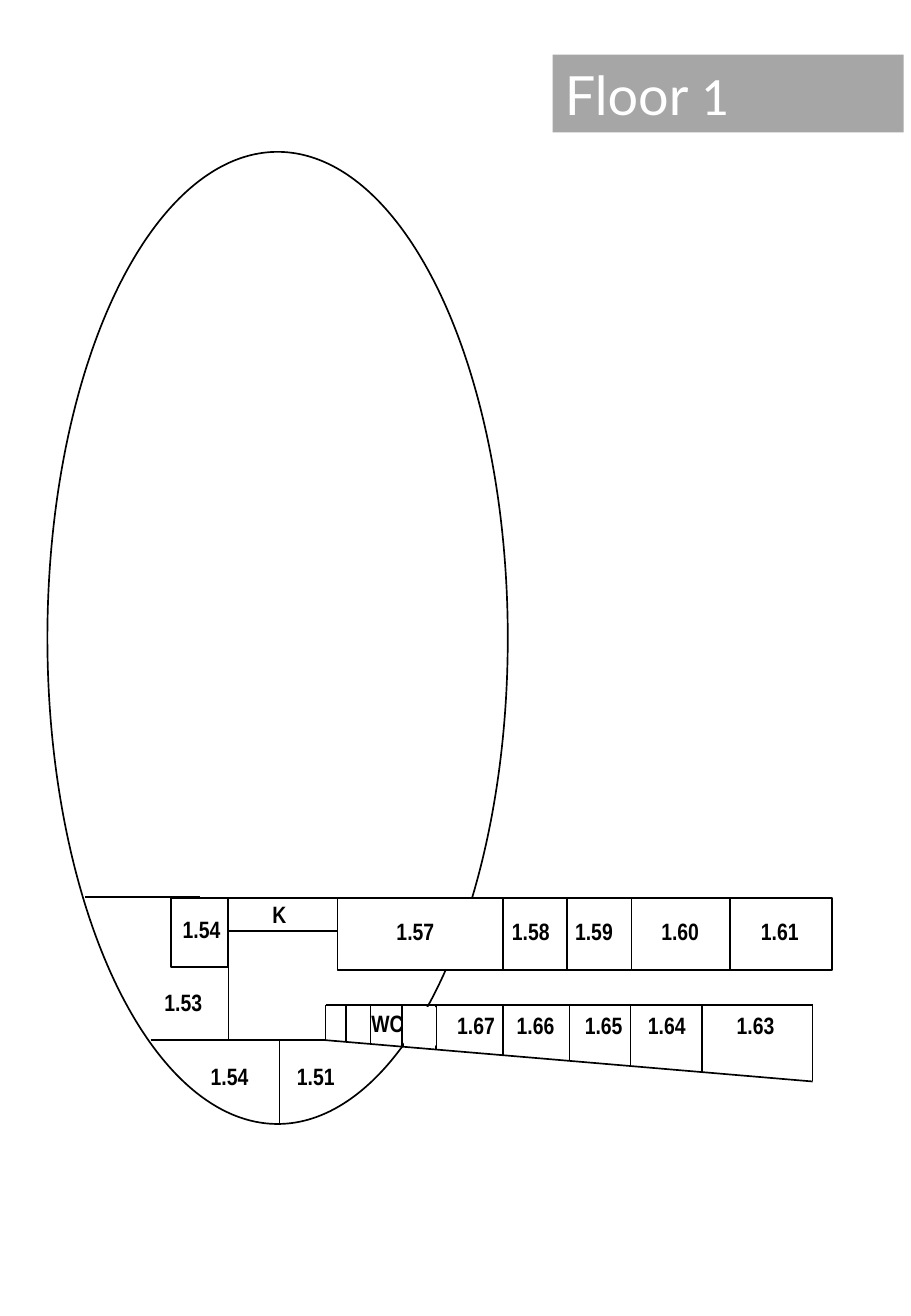
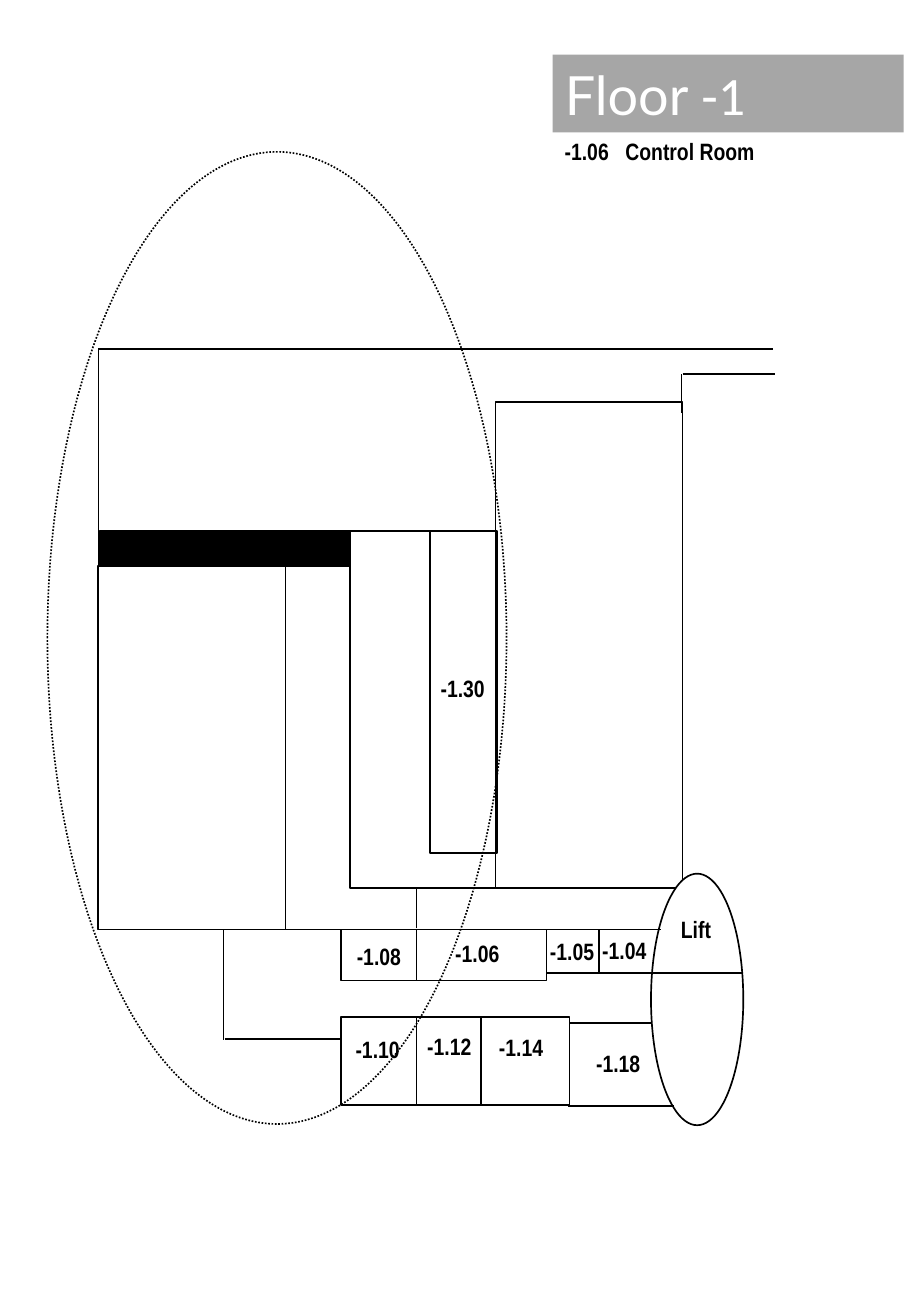
from dataclasses import dataclass
from itertools import accumulate
from typing import Optional

from lxml.etree import SubElement
from pptx import Presentation
from pptx.dml.color import RGBColor
from pptx.enum.dml import MSO_LINE
from pptx.enum.shapes import MSO_CONNECTOR, MSO_SHAPE
from pptx.enum.text import MSO_ANCHOR, MSO_AUTO_SIZE, PP_ALIGN
from pptx.oxml.ns import qn
from pptx.util import Inches, Pt

# Colours and fonts
BLACK = RGBColor(0x00, 0x00, 0x00)
WHITE = RGBColor(0xFF, 0xFF, 0xFF)
BAND = RGBColor(0xA6, 0xA6, 0xA6)
LABEL_FONT = "Arial Narrow"

# Fine grid: 750 columns by 1083 rows over the slide
COLS, ROWS = 750, 1083
CELL = Inches(7.5) // COLS
TITLE_AT = (455, 45, 289, 64)
LABEL_W, LABEL_H = 60, 34


@dataclass(frozen=True)
class Area:
    x: float
    y: float
    w: float
    h: float
    fill: Optional[RGBColor] = None
    line: RGBColor = BLACK
    kind: MSO_SHAPE = MSO_SHAPE.RECTANGLE
    dash: Optional[MSO_LINE] = None


@dataclass(frozen=True)
class Wall:
    x1: float
    y1: float
    x2: float
    y2: float


@dataclass(frozen=True)
class Label:
    text: str
    x: float
    y: float
    w: float = LABEL_W
    align: PP_ALIGN = PP_ALIGN.CENTER
    tab: Optional[int] = None


def grid(*cells: float) -> list[int]:
    return [round(c * CELL) for c in cells]


def room_row(x: float, y: float, widths: list[float], h: float) -> list[Area]:
    """Rooms side by side, each starting where the one before ends."""
    return [Area(left, y, w, h)
            for left, w in zip(accumulate(widths, initial=x), widths)]


def add_run(p, text: str, font: str, size: int, color: RGBColor, bold: bool = False) -> None:
    r = p.add_run()
    r.text = text
    r.font.name, r.font.size, r.font.bold = font, Pt(size), bold
    r.font.color.rgb = color


def add_area(s, area: Area) -> None:
    sp = s.shapes.add_shape(area.kind, *grid(area.x, area.y, area.w, area.h))
    sp.shadow.inherit = False
    if area.fill is None:
        sp.fill.background()
    else:
        sp.fill.solid()
        sp.fill.fore_color.rgb = area.fill
    sp.line.color.rgb = area.line
    sp.line.width = Pt(1)
    if area.dash is not None:
        sp.line.dash_style = area.dash


def add_wall(s, wall: Wall) -> None:
    c = s.shapes.add_connector(MSO_CONNECTOR.STRAIGHT,
                               *grid(wall.x1, wall.y1, wall.x2, wall.y2))
    c.line.color.rgb = BLACK
    c.line.width = Pt(1)
    SubElement(c._element.spPr, qn("a:effectLst"))


def add_label(s, label: Label) -> None:
    sp = s.shapes.add_textbox(*grid(label.x, label.y, label.w, LABEL_H))
    tf = sp.text_frame
    tf.word_wrap = True
    p = tf.paragraphs[0]
    p.alignment = label.align
    if label.tab is not None:
        tabs = SubElement(p._p.get_or_add_pPr(), qn("a:tabLst"))
        SubElement(tabs, qn("a:tab"), pos=str(label.tab * CELL), algn="l")
    add_run(p, label.text, LABEL_FONT, 14, BLACK, bold=True)


def add_title(s, word: str, number: str) -> None:
    sp = s.shapes.title
    sp.left, sp.top, sp.width, sp.height = grid(*TITLE_AT)
    sp.fill.solid()
    sp.fill.fore_color.rgb = BAND
    tf = sp.text_frame
    tf.auto_size = MSO_AUTO_SIZE.NONE
    tf.vertical_anchor = MSO_ANCHOR.MIDDLE
    p = tf.paragraphs[0]
    p.alignment = PP_ALIGN.LEFT
    add_run(p, word, "Lato", 32, WHITE)
    add_run(p, number, "Calibri", 32, WHITE)


def add_floor(prs, title: tuple[str, str], areas: list[Area], walls: list[Wall],
              labels: list[Label], covers: list[Area]) -> None:
    s = prs.slides.add_slide(prs.slide_layouts[5])
    add_title(s, *title)
    for draw, items in ((add_area, areas), (add_wall, walls),
                        (add_label, labels), (add_area, covers)):
        for item in items:
            draw(s, item)


def floor_one(prs) -> None:
    wing_left, wing_right, wing_top, wing_bottom = 268, 669, 827, 856

    def slope(x: float) -> float:
        return wing_bottom + (x - wing_left) * 34 / (wing_right - wing_left)

    areas = [
        Area(39, 125, 379, 800, kind=MSO_SHAPE.OVAL),
        Area(278, 739, 136, 59, fill=WHITE),
        *room_row(414, 739, [53, 53, 81, 84], 59),
        Area(188, 739, 90, 27),
        Area(141, 739, 47, 57),
    ]
    walls = [
        # Lower wing with its sloping side
        Wall(wing_left, wing_top, wing_right, wing_top),
        Wall(wing_left, wing_bottom, wing_right, slope(wing_right)),
        *[Wall(x, slope(x), x, wing_top)
          for x in (268, 285, 305, 331, 359, 414, 469, 519, 578, 669)],
        # Rooms inside the oval
        Wall(124, 856, 268, 856),
        Wall(70, 738, 165, 738),
        Wall(188, 856, 188, 796),
        Wall(230, 925, 230, 857),
    ]
    labels = [
        Label("1.53", 121, 808), Label("1.54", 136, 748),
        Label("K", 200, 736), Label("WC", 289, 825),
        *[Label(t, x, 869) for t, x in (("1.54", 159), ("1.51", 230))],
        *[Label(t, x, 750) for t, x in (
            ("1.57", 312), ("1.58", 407), ("1.59", 459), ("1.60", 530), ("1.61", 612))],
        *[Label(t, x, 827) for t, x in (
            ("1.67", 362), ("1.66", 411), ("1.65", 467), ("1.64", 519), ("1.63", 592))],
    ]
    opening = Area(333, 829, 25, 31, fill=WHITE, line=WHITE)
    add_floor(prs, ("Floor", " 1"), areas, walls, labels, [opening])


def floor_minus_one(prs) -> None:
    areas = [
        Area(288, 437, 120, 294),
        Area(408, 331, 154, 400),
        Area(39, 125, 378, 800, kind=MSO_SHAPE.OVAL, dash=MSO_LINE.ROUND_DOT),
        Area(536, 719, 76, 207, fill=WHITE, kind=MSO_SHAPE.OVAL),
        Area(81, 466, 154, 299),
        Area(82, 437, 206, 29, fill=BLACK),
        Area(354, 437, 55, 265),
        *room_row(281, 765, [62, 107], 42),
        Area(450, 765, 43, 36),
        *room_row(281, 837, [62, 53, 73], 72.5),
    ]
    walls = [
        # Upper hall
        Wall(81, 470, 81, 288), Wall(81, 287, 636, 287),
        Wall(562, 308, 638, 308), Wall(561, 340, 561, 308),
        # Corridor and lift
        Wall(343, 764, 343, 731), Wall(230, 765, 544, 765),
        Wall(493, 801, 536, 801), Wall(536, 801, 612, 801),
        Wall(469, 842, 536, 842), Wall(468, 910, 555, 910),
        # Lower left corner
        Wall(185, 855, 281, 855), Wall(184, 765, 184, 856),
    ]
    labels = [
        Label("-1.04", 484, 765), Label("-1.05", 441, 766),
        Label("-1.06", 363, 768), Label("-1.08", 282, 770),
        Label("-1.10", 281, 847), Label("-1.12", 340, 844),
        Label("-1.14", 399, 845), Label("-1.18", 479, 858),
        Label("-1.30", 351, 550), Label("Lift", 543, 748),
        Label("-1.06\tControl Room", 455, 108, 252, PP_ALIGN.LEFT, tab=50),
    ]
    add_floor(prs, ("Floor ", "-1"), areas, walls, labels, [])


def main() -> None:
    prs = Presentation()
    prs.slide_width, prs.slide_height = grid(COLS, ROWS)
    floor_one(prs)
    floor_minus_one(prs)
    prs.save("out.pptx")


if __name__ == "__main__":
    main()
